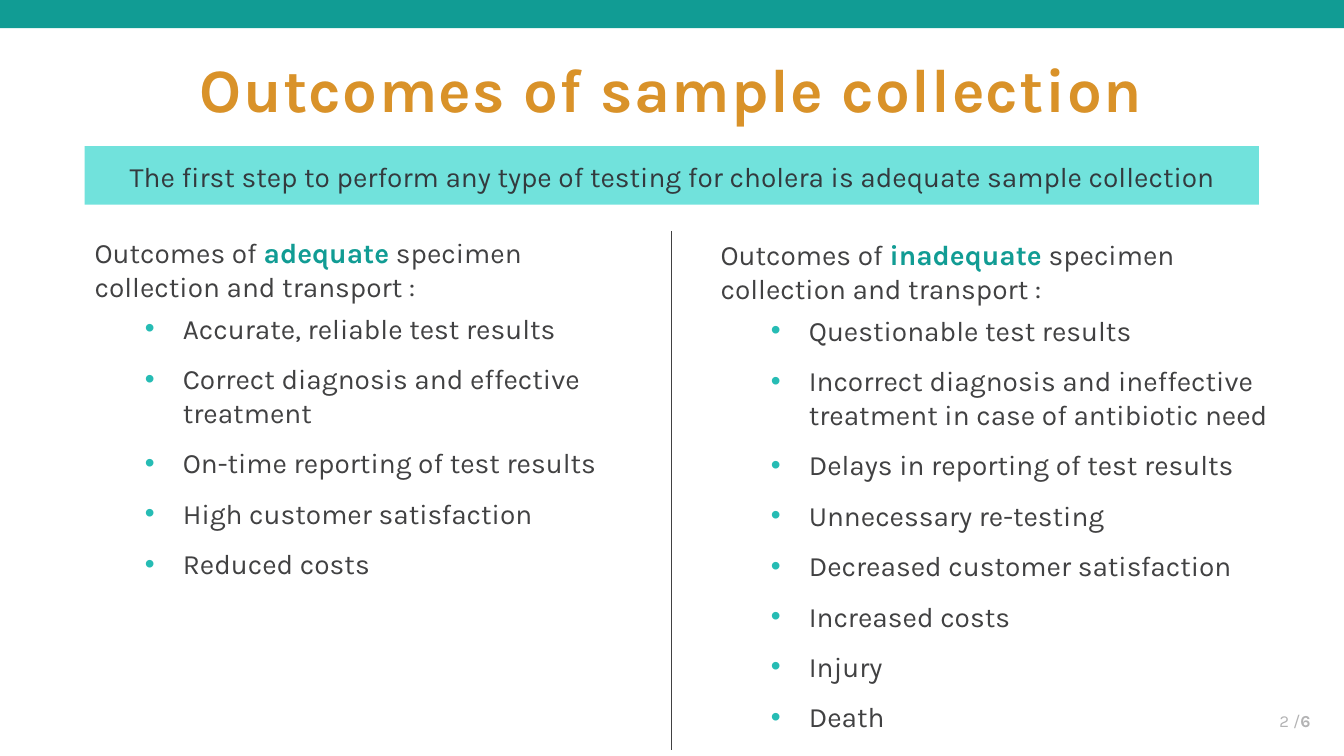
from dataclasses import dataclass

from lxml import etree
from pptx import Presentation
from pptx.dml.color import RGBColor
from pptx.enum.shapes import MSO_CONNECTOR, MSO_SHAPE
from pptx.enum.text import MSO_ANCHOR, MSO_AUTO_SIZE, PP_ALIGN
from pptx.oxml.ns import qn
from pptx.util import Pt

CENTER, RIGHT = PP_ALIGN.CENTER, PP_ALIGN.RIGHT
MIDDLE = MSO_ANCHOR.MIDDLE
NO_AUTO_SIZE = MSO_AUTO_SIZE.NONE
RECTANGLE = MSO_SHAPE.RECTANGLE
STRAIGHT = MSO_CONNECTOR.STRAIGHT

TITLE = "Outcomes of sample collection"
KEY_MESSAGE = "The first step to perform any type of testing for cholera is adequate sample collection"
PAGE, PAGE_COUNT = "2 /", "6"
COLUMNS = [
    {
        "quality": "adequate",
        "box": (60.5, 164.9, 391.7, 255.6),
        "outcomes": [
            "Accurate, reliable test results",
            "Correct diagnosis and effective treatment",
            "On-time reporting of test results",
            "High customer satisfaction",
            "Reduced costs",
        ],
    },
    {
        "quality": "inadequate",
        "box": (507.6, 166.3, 416.9, 365),
        "outcomes": [
            "Questionable test results",
            "Incorrect diagnosis and ineffective treatment in case of antibiotic need",
            "Delays in reporting of test results",
            "Unnecessary re-testing",
            "Decreased customer satisfaction",
            "Increased costs",
            "Injury",
            "Death",
        ],
    },
]


@dataclass(frozen=True)
class Theme:
    font: str = "Karla"
    teal: str = "119C94"
    aqua: str = "71E2DC"
    bullet: str = "26BCB4"
    orange: str = "D99229"
    slate: str = "333A3E"
    body: str = "414142"
    grey: str = "B3B3B4"
    title_size: int = 44
    body_size: int = 20
    page_size: int = 12


THEME = Theme()


def points(values):
    return [Pt(value) for value in values]


def color(value):
    return RGBColor.from_string(value)


def style(font, size, ink, bold=None):
    font.name = THEME.font
    font.size = Pt(size)
    font.bold = bold
    font.color.rgb = color(ink)


def add_band(slide, box, fill):
    shape = slide.shapes.add_shape(RECTANGLE, *points(box))
    shape.shadow.inherit = False
    shape.fill.solid()
    shape.fill.fore_color.rgb = color(fill)
    shape.line.fill.background()


def add_text_box(slide, box):
    frame = slide.shapes.add_textbox(*points(box)).text_frame
    frame.word_wrap = True
    return frame


def add_runs(paragraph, runs):
    for text, ink, bold in runs:
        run = paragraph.add_run()
        run.text = text
        run.font.bold = bold
        run.font.color.rgb = color(ink)


def add_bullet(paragraph):
    properties = paragraph._p.get_or_add_pPr()
    properties.set("marL", str(Pt(63)))
    properties.set("indent", str(Pt(-27)))
    bullet_color = etree.SubElement(properties, qn("a:buClr"))
    etree.SubElement(bullet_color, qn("a:srgbClr"), val=THEME.bullet)
    etree.SubElement(properties, qn("a:buFont"), typeface="Arial")
    etree.SubElement(properties, qn("a:buChar"), char="•")


def add_title(slide):
    title = slide.shapes.title
    title.left, title.top, title.width, title.height = points((60.5, 8.6, 838.8, 118.1))
    frame = title.text_frame
    frame.text = TITLE
    frame.auto_size = NO_AUTO_SIZE
    frame.vertical_anchor = MIDDLE
    paragraph = frame.paragraphs[0]
    paragraph.alignment = CENTER
    paragraph.line_spacing = 0.8
    style(paragraph.font, THEME.title_size, THEME.orange, True)
    paragraph.runs[0].font._element.set("spc", "100")


def add_key_message(slide):
    add_band(slide, (60.5, 104.4, 838.8, 41.8), THEME.aqua)
    paragraph = add_text_box(slide, (69.8, 110.2, 821.5, 31.7)).paragraphs[0]
    paragraph.text = KEY_MESSAGE
    paragraph.alignment = CENTER
    style(paragraph.font, THEME.body_size, THEME.slate)


def add_column(slide, column):
    frame = add_text_box(slide, column["box"])
    heading = frame.paragraphs[0]
    heading.space_after = Pt(6)
    style(heading.font, THEME.body_size, THEME.body)
    add_runs(heading, [
        ("Outcomes of ", THEME.body, False),
        (column["quality"], THEME.teal, True),
        (" specimen collection and transport :", THEME.body, False),
    ])
    for outcome in column["outcomes"]:
        paragraph = frame.add_paragraph()
        paragraph.text = outcome
        paragraph.level = 1
        add_bullet(paragraph)
        paragraph.space_after = Pt(12)
        style(paragraph.font, THEME.body_size, THEME.body)


def add_divider(slide):
    divider = slide.shapes.add_connector(STRAIGHT, *points((480, 164.9, 480, 535.7)))
    divider.line.color.rgb = color(THEME.body)
    divider.line.width = Pt(0.75)
    etree.SubElement(divider._element.spPr, qn("a:effectLst"))


def add_page_number(slide):
    frame = add_text_box(slide, (727.2, 500.4, 216, 28.8))
    frame.vertical_anchor = MIDDLE
    paragraph = frame.paragraphs[0]
    paragraph.alignment = RIGHT
    style(paragraph.font, THEME.page_size, THEME.grey)
    add_runs(paragraph, [(PAGE, THEME.grey, False), (PAGE_COUNT, THEME.grey, True)])


def main():
    presentation = Presentation()
    presentation.slide_width, presentation.slide_height = Pt(960), Pt(540)
    slide = presentation.slides.add_slide(presentation.slide_layouts[5])
    add_band(slide, (-5.8, -6.5, 972, 26.6), THEME.teal)
    add_title(slide)
    add_key_message(slide)
    for column in COLUMNS:
        add_column(slide, column)
    add_divider(slide)
    add_page_number(slide)
    presentation.save("out.pptx")


if __name__ == "__main__":
    main()
